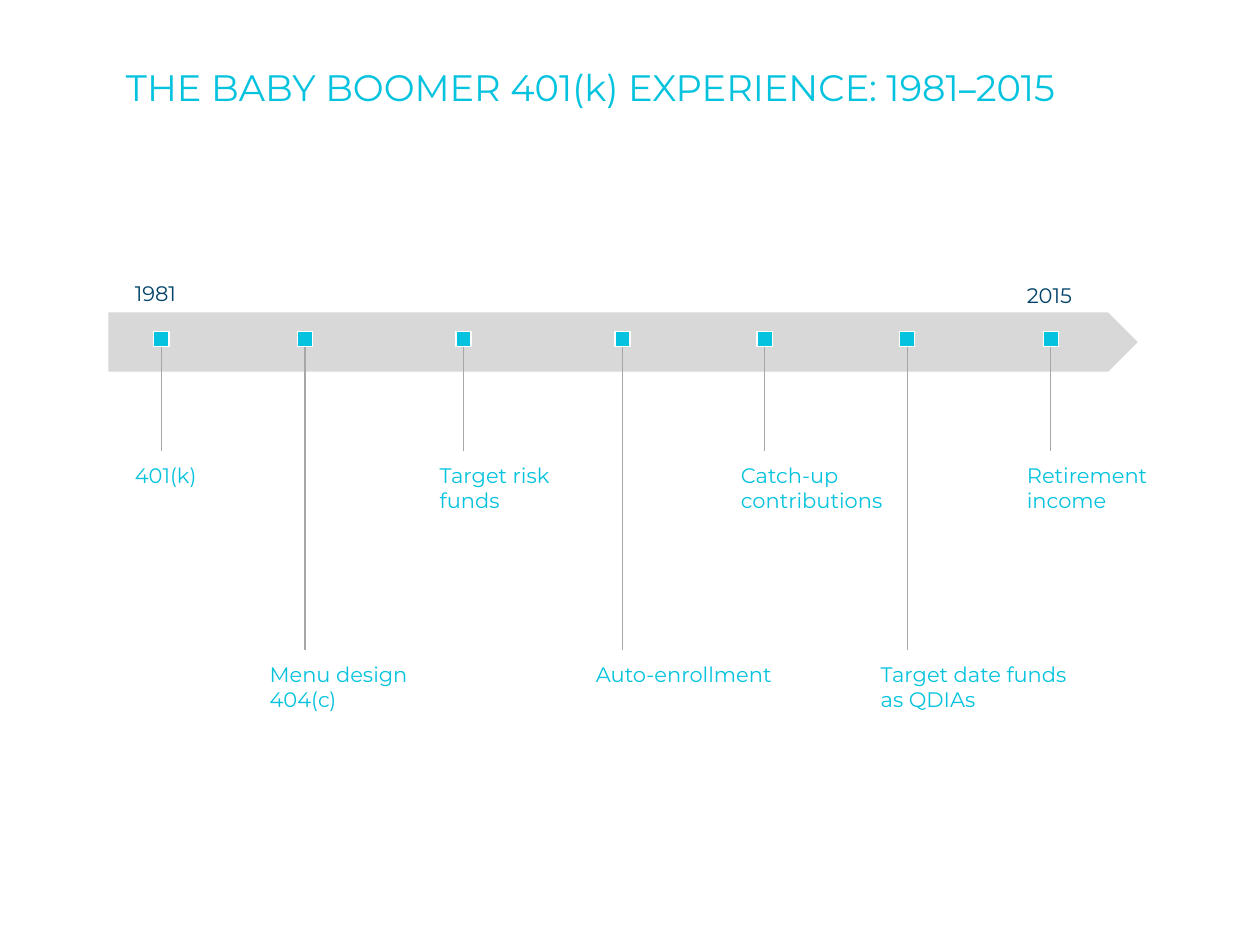
from pptx import Presentation
from pptx.dml.color import RGBColor
from pptx.enum.shapes import MSO_CONNECTOR as Connector, MSO_SHAPE as Shape
from pptx.enum.text import MSO_ANCHOR as Anchor
from pptx.oxml.ns import qn
from pptx.util import Inches, Pt
from lxml.etree import SubElement

CYAN, NAVY, BAND, GRAY, WHITE = "05C3DE", "00426A", "D8D8D8", "A7A7A7", "FFFFFF"
MARKER_TOP, MARKER_SIZE = 2.63, 0.12
SHORT_END, LONG_END = 3.58, 5.16
LABEL_GAP = 0.09

FRAME_FORMAT = {
    "word_wrap": True,
    "margin_left": 0,
    "margin_top": 0,
    "margin_right": 0,
    "margin_bottom": 0,
}

TITLE_SPANS = [
    ("THE BABY BOOMER 401(k) EXPERIENCE: 1981", "Montserrat"),
    ("–", "Arial Narrow"),
    ("2015", "Montserrat"),
]

YEARS = [("1981", 1.07, 2.23), ("2015", 8.15, 2.24)]

MILESTONES = [
    ("401(k)", 1.28, 1.07, 1.24, SHORT_END),
    ("Menu design 404(c)", 2.42, 2.14, 1.24, LONG_END),
    ("Target risk funds", 3.68, 3.49, 1.24, SHORT_END),
    ("Auto-enrollment", 4.94, 4.73, 2.04, LONG_END),
    ("Catch-up contributions", 6.07, 5.88, 1.24, SHORT_END),
    ("Target date funds\vas QDIAs", 7.2, 6.99, 2.04, LONG_END),
    ("Retirement income", 8.34, 8.15, 1.24, SHORT_END),
]


def rgb(value):
    """Turn a hex string into a colour."""
    return RGBColor.from_string(value)


def apply_format(target, values):
    """Set each named attribute on the target."""
    for name, value in values.items():
        setattr(target, name, value)


def add_text(page, spans, place, size, color, frame_format, para_format):
    """Add a one-paragraph text box made of (text, font) spans."""
    box = page.shapes.add_textbox(*map(Inches, place))
    frame = box.text_frame
    apply_format(frame, FRAME_FORMAT | frame_format)
    para = frame.paragraphs[0]
    apply_format(para, para_format)
    para.font.size = Pt(size)
    for index, (text, font_name) in enumerate(spans):
        if index:
            span = para.add_run()
            span.text = text
        else:
            para.text = text
    fonts = [font_name for _, font_name in spans]
    runs = list(para.runs)
    for index, span in enumerate(runs):
        font_name = fonts[min(index, len(fonts) - 1)]
        apply_format(span.font, {"name": font_name, "size": Pt(size)})
        span.font.color.rgb = rgb(color)


def add_label(page, text, left, top, width, color):
    """Add a small timeline label."""
    add_text(page, [(text, "Montserrat")], (left, top, width, 0.2), 12, color,
             {}, {"space_after": Pt(10)})


def add_block(page, kind, place, fill, line=None):
    """Add a filled preset shape, outlined only when a line colour is given."""
    block = page.shapes.add_shape(kind, *map(Inches, place))
    block.shadow.inherit = False
    block.fill.solid()
    block.fill.fore_color.rgb = rgb(fill)
    if line:
        block.line.color.rgb = rgb(line)
        block.line.width = Pt(0.85)
    else:
        block.line.fill.background()
    return block


def add_stem(page, marker, center, end):
    """Drop a thin line from the bottom of a marker."""
    start = MARKER_TOP + MARKER_SIZE
    stem = page.shapes.add_connector(
        Connector.STRAIGHT, *map(Inches, (center, start, center, end)))
    stem.begin_connect(marker, 2)
    stem.line.color.rgb = rgb(GRAY)
    stem.line.width = Pt(0.75)
    SubElement(stem.element.spPr, qn("a:effectLst"))


def add_milestone(page, text, center, left, width, end):
    """Add a marker, its stem and its label."""
    place = (center - MARKER_SIZE / 2, MARKER_TOP, MARKER_SIZE, MARKER_SIZE)
    marker = add_block(page, Shape.RECTANGLE, place, CYAN, WHITE)
    add_stem(page, marker, center, end)
    add_label(page, text, left, end + LABEL_GAP, width, CYAN)


def main():
    """Build the timeline slide and save it."""
    deck = Presentation()
    deck.slide_width, deck.slide_height = Inches(10), Inches(7.5)
    page = deck.slides.add_slide(deck.slide_layouts[6])
    add_text(page, TITLE_SPANS, (1, 0.31, 8.9, 0.81), 21, CYAN,
             {"vertical_anchor": Anchor.MIDDLE}, {"line_spacing": 0.85})
    add_block(page, Shape.PENTAGON, (0.86, 2.48, 8.17, 0.47), BAND)
    for year, left, top in YEARS:
        add_label(page, year, left, top, 0.74, NAVY)
    for milestone in MILESTONES:
        add_milestone(page, *milestone)
    deck.save("out.pptx")


if __name__ == "__main__":
    main()
